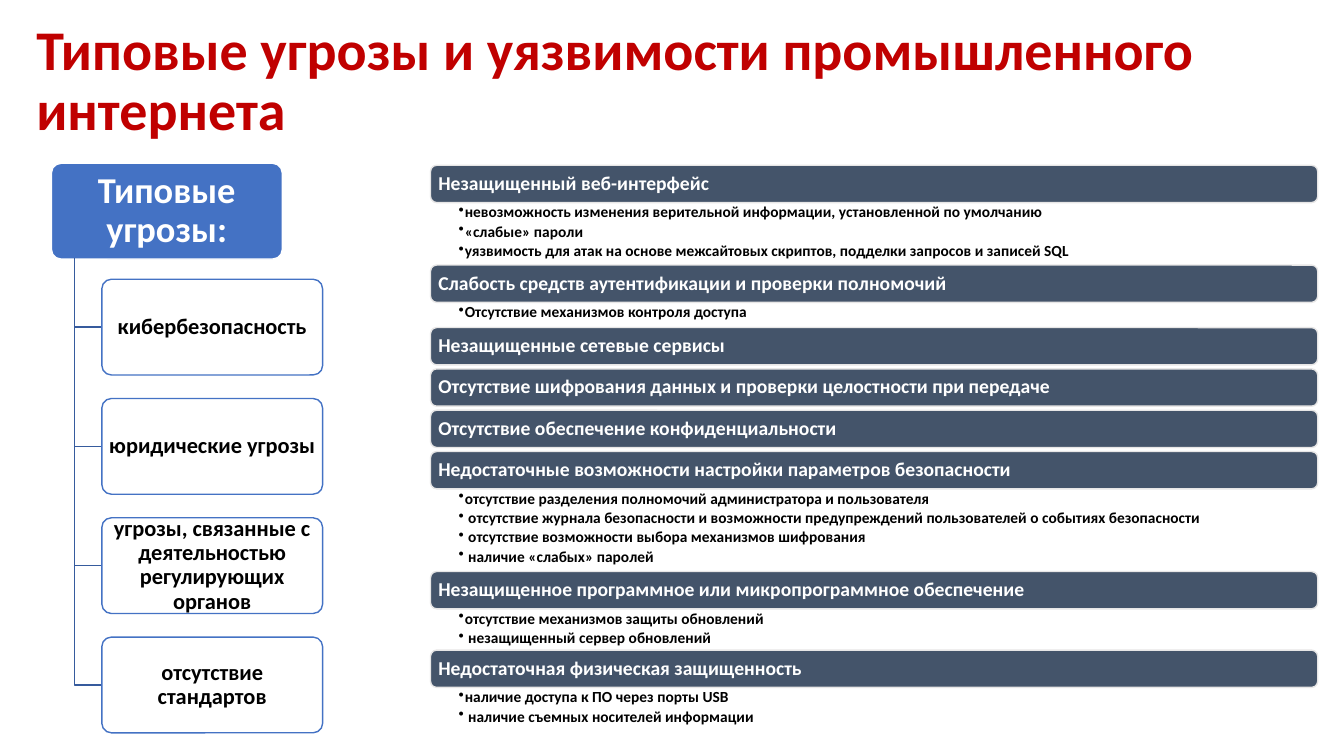
"""Build a slide on threats and vulnerabilities of the industrial internet."""
from lxml.etree import SubElement
from pptx import Presentation
from pptx.dml.color import RGBColor
from pptx.enum.shapes import MSO_SHAPE as SHAPE
from pptx.enum.text import MSO_ANCHOR as ANCHOR, PP_ALIGN as ALIGN
from pptx.oxml.ns import qn
from pptx.util import Inches, Pt

TITLE = "Типовые угрозы и уязвимости промышленного интернета"
ROOT = "Типовые угрозы:"
THREATS = [
    "кибербезопасность",
    "юридические угрозы",
    "угрозы, связанные с деятельностью регулирующих органов",
    "отсутствие стандартов",
]
VULNERABILITIES = [
    ("Незащищенный веб-интерфейс", [
        "невозможность изменения верительной информации, установленной по умолчанию",
        "«слабые» пароли",
        "уязвимость для атак на основе межсайтовых скриптов, подделки запросов и записей SQL",
    ]),
    ("Слабость средств аутентификации и проверки полномочий", [
        "Отсутствие механизмов контроля доступа",
    ]),
    ("Незащищенные сетевые сервисы", []),
    ("Отсутствие шифрования данных и проверки целостности при передаче", []),
    ("Отсутствие обеспечение конфиденциальности", []),
    ("Недостаточные возможности настройки параметров безопасности", [
        "отсутствие разделения полномочий администратора и пользователя",
        " отсутствие журнала безопасности и возможности предупреждений пользователей о событиях безопасности",
        " отсутствие возможности выбора механизмов шифрования",
        " наличие «слабых» паролей",
    ]),
    ("Незащищенное программное или микропрограммное обеспечение", [
        "отсутствие механизмов защиты обновлений",
        " незащищенный сервер обновлений",
    ]),
    ("Недостаточная физическая защищенность", [
        "наличие доступа к ПО через порты USB",
        " наличие съемных носителей информации",
    ]),
]

RED, WHITE, BLACK = "C00000", "FFFFFF", "000000"
BLUE, LINK, SLATE, PALE = "4472C4", "365B9D", "44546A", "E7E6E6"

BAR_X, BAR_Y, BAR_W, BAR_H = 4.27, 1.64, 8.8, 0.37
BAR_GAP = 0.04
LIST_H = {0: BAR_GAP, 1: 0.25, 2: 0.41, 3: 0.62, 4: 0.82}

ROOT_X, ROOT_Y, ROOT_W, BOX_H = 0.51, 1.62, 2.29, 0.95
TRUNK_X, TRUNK_Y = 0.74, 2.56
BOX_X, BOX_W, FIRST_Y, LAST_Y = 1.01, 2.19, 2.77, 6.32


def color(value):
    return RGBColor.from_string(value)


def write(shape, lines, size, ink, inset=None, align=ALIGN.LEFT, anchor=ANCHOR.MIDDLE, after=0):
    tf = shape.text_frame
    frame = {"word_wrap": True, "vertical_anchor": anchor}
    if inset:
        sides = ("margin_left", "margin_top", "margin_right", "margin_bottom")
        frame.update(zip(sides, map(Inches, inset)))
    for name, value in frame.items():
        setattr(tf, name, value)
    for i, line in enumerate(lines):
        p = tf.paragraphs[0] if i == 0 else tf.add_paragraph()
        layout = {"alignment": align, "line_spacing": 0.9, "space_before": Pt(0), "space_after": Pt(after)}
        for name, value in layout.items():
            setattr(p, name, value)
        r = p.add_run()
        r.text = line
        for name, value in {"name": "Calibri", "size": Pt(size), "bold": True}.items():
            setattr(r.font, name, value)
        r.font.color.rgb = color(ink)
    return tf


def add_box(s, x, y, w, h, fill, line, adj=None):
    sp = s.shapes.add_shape(SHAPE.ROUNDED_RECTANGLE, *map(Inches, (x, y, w, h)))
    sp.shadow.inherit = False
    sp.fill.solid()
    sp.fill.fore_color.rgb = color(fill)
    sp.line.color.rgb = color(line)
    sp.line.width = Pt(1)
    if adj is not None:
        sp.adjustments[0] = adj
    return sp


def add_list(s, y, lines):
    box = s.shapes.add_textbox(*map(Inches, (BAR_X, y, BAR_W, LIST_H[len(lines)])))
    tf = write(box, lines, 11, BLACK, (0.28, 0.02, 0.11, 0.02), anchor=ANCHOR.TOP, after=1.9)
    for p in tf.paragraphs:
        pPr = p._p.get_or_add_pPr()
        pPr.set("marL", str(Inches(0.06)))
        pPr.set("indent", str(Inches(-0.06)))
        SubElement(pPr, qn("a:buChar")).set("char", "•")


def add_branch(s, y):
    builder = s.shapes.build_freeform(Inches(TRUNK_X), Inches(TRUNK_Y))
    corners = [(TRUNK_X, y), (BOX_X, y)]
    builder.add_line_segments([(Inches(a), Inches(b)) for a, b in corners], close=False)
    branch = builder.convert_to_shape()
    branch.shadow.inherit = False
    branch.fill.background()
    branch.line.color.rgb = color(LINK)
    branch.line.width = Pt(1)


def add_threats(s):
    root = add_box(s, ROOT_X, ROOT_Y, ROOT_W, BOX_H, BLUE, WHITE, 0.1)
    write(root, [ROOT], 26, WHITE, (0.05, 0.04, 0.05, 0.04), ALIGN.CENTER)
    step = (LAST_Y - FIRST_Y) / (len(THREATS) - 1)
    for i, threat in enumerate(THREATS):
        y = FIRST_Y + i * step
        add_branch(s, y + BOX_H / 2)
        box = add_box(s, BOX_X, y, BOX_W, BOX_H, WHITE, BLUE, 0.1)
        write(box, [threat], 16, BLACK, (0.03, 0.02, 0.03, 0.02), ALIGN.CENTER)


def add_vulnerabilities(s):
    y = BAR_Y
    for heading, details in VULNERABILITIES:
        bar = add_box(s, BAR_X, y, BAR_W, BAR_H, SLATE, PALE)
        write(bar, [heading], 14, WHITE, (0.06, 0.06, 0.06, 0.06))
        y += BAR_H
        if details:
            add_list(s, y, details)
        y += LIST_H[len(details)]


def main():
    prs = Presentation()
    prs.slide_width, prs.slide_height = Inches(13.33), Inches(7.5)
    s = prs.slides.add_slide(prs.slide_layouts[5])
    title = s.shapes.title
    place = {"left": 0.26, "top": 0.09, "width": 12.73, "height": 1.45}
    for name, value in place.items():
        setattr(title, name, Inches(value))
    write(title, [TITLE], 40, RED)
    add_vulnerabilities(s)
    add_threats(s)
    prs.save("out.pptx")


if __name__ == "__main__":
    main()
